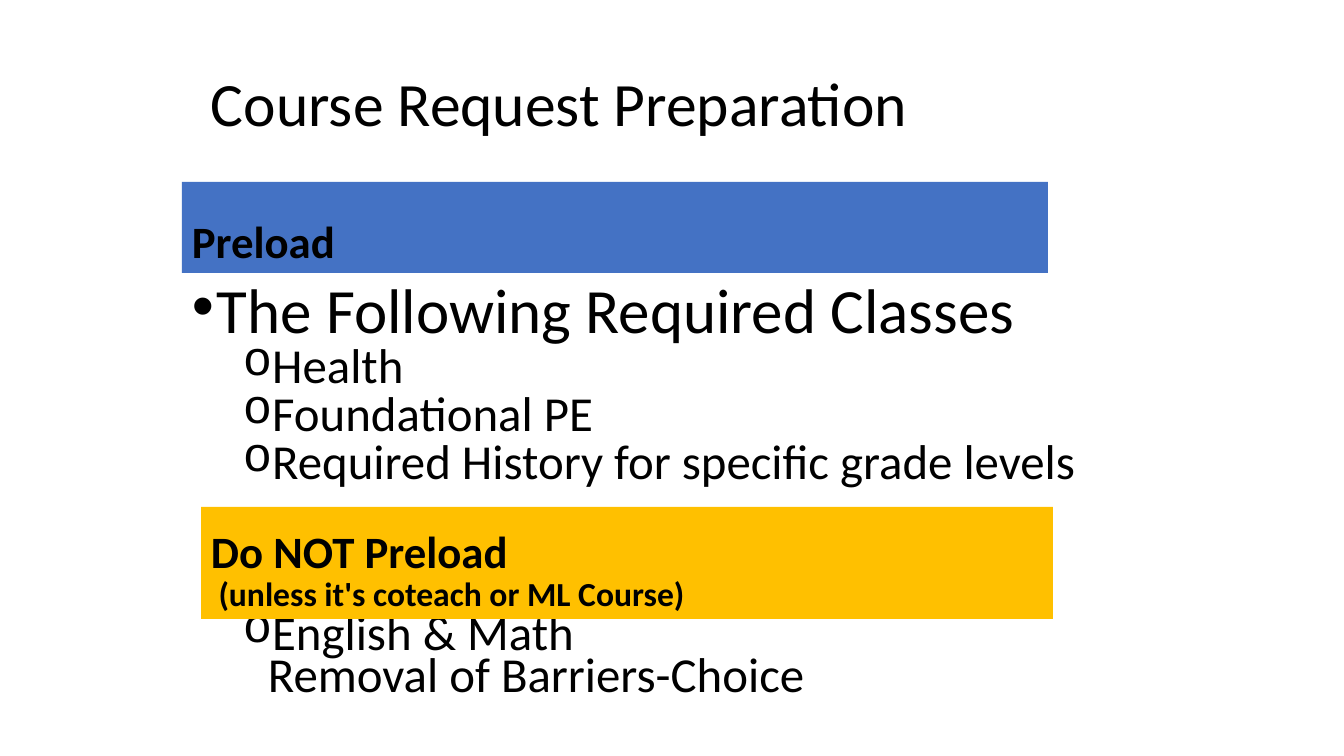
import dataclasses

import lxml.etree
import pptx
import pptx.dml.color
import pptx.enum.shapes
import pptx.enum.text
import pptx.oxml.ns
import pptx.util


@dataclasses.dataclass(frozen=True)
class Theme:
    """Hold the colours, fonts and type sizes of the slide."""
    ink: str = "000000"
    blue: str = "4472C4"
    gold: str = "FFC000"
    font: str = "Calibri"
    dot: str = "Arial"
    ring: str = "Courier New"
    title: float = 44
    lead: float = 45
    item: float = 34.9
    head: float = 32
    note: float = 24


THEME = Theme()
ANCHOR = pptx.enum.text.MSO_ANCHOR


def px(count):
    """Turn px into EMU."""
    return pptx.util.Emu(round(count * 914400 / 100.8))


def tint(code):
    """Return a colour for a hex code."""
    return pptx.dml.color.RGBColor.from_string(code)


def assign(target, values):
    """Set attributes of an object from a dict."""
    for name, value in values.items():
        setattr(target, name, value)


def write(para, text, size, bold=False):
    """Add a run in the theme font."""
    run = para.add_run()
    run.text = text
    assign(run.font, {"name": THEME.font, "size": pptx.util.Pt(size), "bold": bold})
    run.font.color.rgb = tint(THEME.ink)


def bullet(para, mark, face, left, hang):
    """Give a paragraph a hanging bullet."""
    props = para._p.get_or_add_pPr()
    props.set("marL", str(px(left)))
    props.set("indent", str(-px(hang)))
    for tag, key, value in (("a:buFont", "typeface", face), ("a:buChar", "char", mark)):
        node = lxml.etree.SubElement(props, pptx.oxml.ns.qn(tag))
        node.set(key, value)


def title(slide, box, text):
    """Place the slide title."""
    frame = slide.shapes.add_textbox(*map(px, box)).text_frame
    assign(frame, {"word_wrap": True, "vertical_anchor": ANCHOR.MIDDLE})
    para = frame.paragraphs[0]
    para.line_spacing = 0.9
    write(para, text, THEME.title)


def banner(slide, box, fill, head, note=None):
    """Place a coloured heading band with an optional second line."""
    rect = pptx.enum.shapes.MSO_SHAPE.RECTANGLE
    shape = slide.shapes.add_shape(rect, *map(px, box))
    shape.shadow.inherit = False
    shape.fill.solid()
    shape.fill.fore_color.rgb = tint(fill)
    shape.line.fill.background()
    frame = shape.text_frame
    assign(frame, {"word_wrap": True, "vertical_anchor": ANCHOR.BOTTOM})
    para = frame.paragraphs[0]
    assign(para, {"alignment": pptx.enum.text.PP_ALIGN.LEFT, "line_spacing": 0.9,
                  "space_before": pptx.util.Pt(10)})
    write(para, head, THEME.head, True)
    if note:
        para.add_line_break()
        write(para, note, THEME.note, True)


def body(slide, box, rows):
    """Place the list, each row being level, space before and lines."""
    frame = slide.shapes.add_textbox(*map(px, box)).text_frame
    assign(frame, {"word_wrap": True, "vertical_anchor": ANCHOR.TOP})
    styles = (("•", THEME.dot, 25, THEME.lead), ("o", THEME.ring, 76, THEME.item))
    for index, (level, gap, lines) in enumerate(rows):
        para = frame.add_paragraph() if index else frame.paragraphs[0]
        mark, face, left, size = styles[level]
        assign(para, {"level": level, "line_spacing": 0.7,
                      "space_before": pptx.util.Pt(gap)})
        bullet(para, mark, face, left, 25)
        for order, line in enumerate(lines):
            if order:
                para.add_line_break()
            write(para, line, size)


def main():
    """Build and save the slide."""
    deck = pptx.Presentation()
    assign(deck, {"slide_width": px(1344), "slide_height": px(756)})
    slide = deck.slides.add_slide(deck.slide_layouts[6])
    title(slide, (201, 33, 827, 148), "Course Request Preparation")
    banner(slide, (182, 182, 866, 91), THEME.blue, "Preload")
    body(slide, (182, 286, 923, 450), (
        (0, 10, ["The Following Required Classes"]),
        (1, 5, ["Health"]),
        (1, 5, ["Foundational PE"]),
        (1, 5, ["Required History for specific grade levels"]),
        (1, 93, ["English & Math", "Removal of Barriers-Choice"]),
    ))
    banner(slide, (201, 507, 852, 112), THEME.gold, "Do NOT Preload",
           " (unless it's coteach or ML Course)")
    deck.save("out.pptx")


if __name__ == "__main__":
    main()
